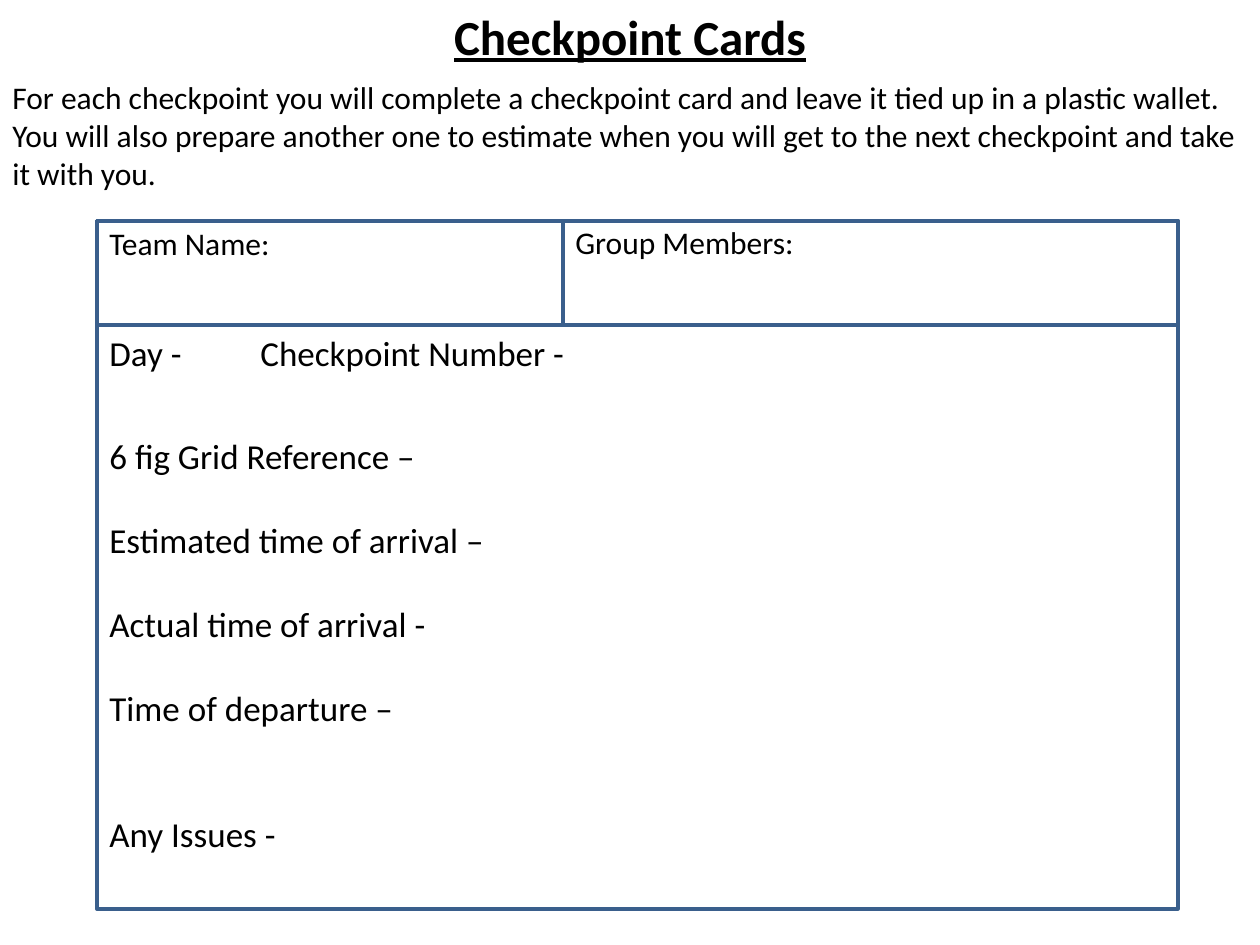
from lxml import etree
from pptx import Presentation
from pptx.dml.color import RGBColor
from pptx.enum.shapes import MSO_SHAPE
from pptx.enum.text import MSO_AUTO_SIZE, PP_ALIGN
from pptx.oxml.ns import qn
from pptx.util import Pt

RECTANGLE = MSO_SHAPE.RECTANGLE
GROW = MSO_AUTO_SIZE.SHAPE_TO_FIT_TEXT
CENTER = PP_ALIGN.CENTER
LEFT = PP_ALIGN.LEFT

PX = 914400 / 126
PAGE_WIDTH, PAGE_HEIGHT = 1260, 945
INK, BORDER = "000000", "3A5F8C"
FIELDS = [
    ("6 fig Grid Reference –", 0),
    ("Estimated time of arrival –", 24),
    ("Actual time of arrival -", 24),
    ("Time of departure –", 24),
    ("Any Issues -", 48),
]


def px(length):
    return round(length * PX)


def color(value):
    return RGBColor.from_string(value)


def add_text(page, box, text, size, align=LEFT, heading=False):
    shape = page.shapes.add_textbox(*map(px, box))
    frame = shape.text_frame
    frame.word_wrap = True
    frame.auto_size = GROW
    frame.text = text
    for para in frame.paragraphs:
        para.alignment = align
        for span in para.runs:
            font = span.font
            font.name = "Calibri"
            font.size = Pt(size)
            font.color.rgb = color(INK)
            if heading:
                font.bold = font.underline = True
    return frame


def add_frame(page, box):
    shape = page.shapes.add_shape(RECTANGLE, *map(px, box))
    shape.shadow.inherit = False
    shape.fill.background()
    shape.line.color.rgb = color(BORDER)
    shape.line.width = Pt(2)


def add_tab_stop(para, position):
    tabs = etree.SubElement(para._p.get_or_add_pPr(), qn("a:tabLst"))
    etree.SubElement(tabs, qn("a:tab"), pos=str(px(position)), algn="l")


def add_intro(page, box):
    left, top, width, height = box
    add_text(page, (left, top, width, 72), "Checkpoint Cards", 28, CENTER, True)
    add_text(
        page,
        (left, top + 72, width, height - 72),
        "For each checkpoint you will complete a checkpoint card and leave it "
        "tied up in a plastic wallet. You will also prepare another one to "
        "estimate when you will get to the next checkpoint and take it with you.",
        18,
    )


def add_card(page, box):
    left, top, width, height = box
    header, team = 104, 466
    add_frame(page, box)
    add_frame(page, (left, top, width, header))
    add_frame(page, (left, top, team, header))
    add_text(page, (left, top - 3, 348, 50), "Team Name:", 18)
    add_text(page, (left + team, top - 4, 348, 50), "Group Members:", 18)

    day = add_text(page, (left, top + header, 576, 55), "Day -\tCheckpoint Number -", 20)
    add_tab_stop(day.paragraphs[0], 151)

    lines = "\n".join(label for label, _ in FIELDS)
    fields = add_text(page, (left, top + 207, 475, 437), lines, 20)
    for para, (_, gap) in zip(fields.paragraphs, FIELDS):
        para.space_before = Pt(gap)


def main():
    deck = Presentation()
    deck.slide_width, deck.slide_height = px(PAGE_WIDTH), px(PAGE_HEIGHT)
    page = deck.slides.add_slide(deck.slide_layouts[6])
    add_intro(page, (0, 0, PAGE_WIDTH, 199))
    add_card(page, (97, 221, 1081, 688))
    deck.save("out.pptx")


if __name__ == "__main__":
    main()
